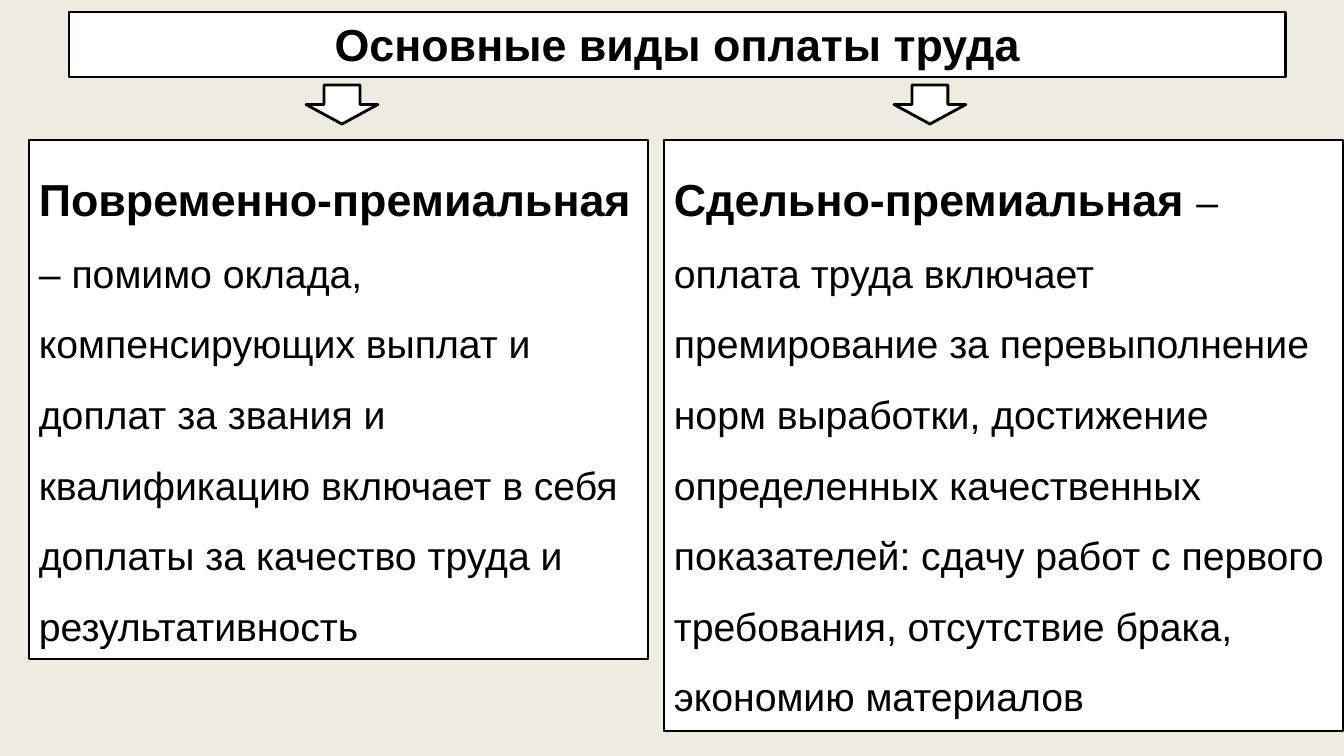
"""Build a slide on the main kinds of pay."""
from pptx import Presentation
from pptx.dml.color import RGBColor
from pptx.enum.shapes import MSO_SHAPE
from pptx.enum.text import MSO_ANCHOR, MSO_AUTO_SIZE, PP_ALIGN
from pptx.util import Emu, Pt

COLORS = {"background": "EEECE1", "fill": "FFFFFF", "ink": "000000"}
FONT = "Arial"
HEAD_PT, BODY_PT, LINE_PT = 32, 28, 2
SLIDE = (1344, 756)
EMU_PER_PX = 12192000 / SLIDE[0]

TITLE = ("Основные виды оплаты труда", (69, 12, 1217, 65))
ARROW_TOP, ARROW_SIZE = 85, (72, 39)
CARD_TOP = 140
KINDS = [
    {"head": "Повременно-премиальная",
     "body": " – помимо оклада, компенсирующих выплат и доплат за звания и "
             "квалификацию включает в себя доплаты за качество труда и "
             "результативность",
     "left": 29, "size": (619, 519), "arrow_left": 306},
    {"head": "Сдельно-премиальная ",
     "body": "– оплата труда включает премирование за перевыполнение норм "
             "выработки, достижение определенных качественных показателей: "
             "сдачу работ с первого требования, отсутствие брака, экономию "
             "материалов",
     "left": 664, "size": (679, 591), "arrow_left": 894},
]


def px(n):
    return Emu(round(n * EMU_PER_PX))


def color(name):
    return RGBColor.from_string(COLORS[name])


def add_outlined(s, preset, box):
    sp = s.shapes.add_shape(preset, *map(px, box))
    sp.shadow.inherit = False
    sp.fill.solid()
    sp.fill.fore_color.rgb = color("fill")
    sp.line.color.rgb = color("ink")
    sp.line.width = Pt(LINE_PT)
    return sp


def add_text_box(s, box, runs, align, spacing):
    tf = add_outlined(s, MSO_SHAPE.RECTANGLE, box).text_frame
    tf.word_wrap = True
    tf.auto_size = MSO_AUTO_SIZE.SHAPE_TO_FIT_TEXT
    tf.vertical_anchor = MSO_ANCHOR.TOP
    p = tf.paragraphs[0]
    p.alignment = align
    p.line_spacing = spacing
    for text, size, bold in runs:
        r = p.add_run()
        r.text = text
        r.font.name = FONT
        r.font.size = Pt(size)
        r.font.bold = bold
        r.font.color.rgb = color("ink")


def main():
    prs = Presentation()
    prs.slide_width, prs.slide_height = map(px, SLIDE)
    s = prs.slides.add_slide(prs.slide_layouts[6])
    s.background.fill.solid()
    s.background.fill.fore_color.rgb = color("background")

    title, title_box = TITLE
    add_text_box(s, title_box, [(title, HEAD_PT, True)], PP_ALIGN.CENTER, 1.0)
    for kind in KINDS:
        add_outlined(s, MSO_SHAPE.DOWN_ARROW,
                     (kind["arrow_left"], ARROW_TOP, *ARROW_SIZE))
        runs = [(kind["head"], HEAD_PT, True), (kind["body"], BODY_PT, False)]
        add_text_box(s, (kind["left"], CARD_TOP, *kind["size"]), runs,
                     PP_ALIGN.LEFT, 1.5)
    prs.save("out.pptx")


if __name__ == "__main__":
    main()
